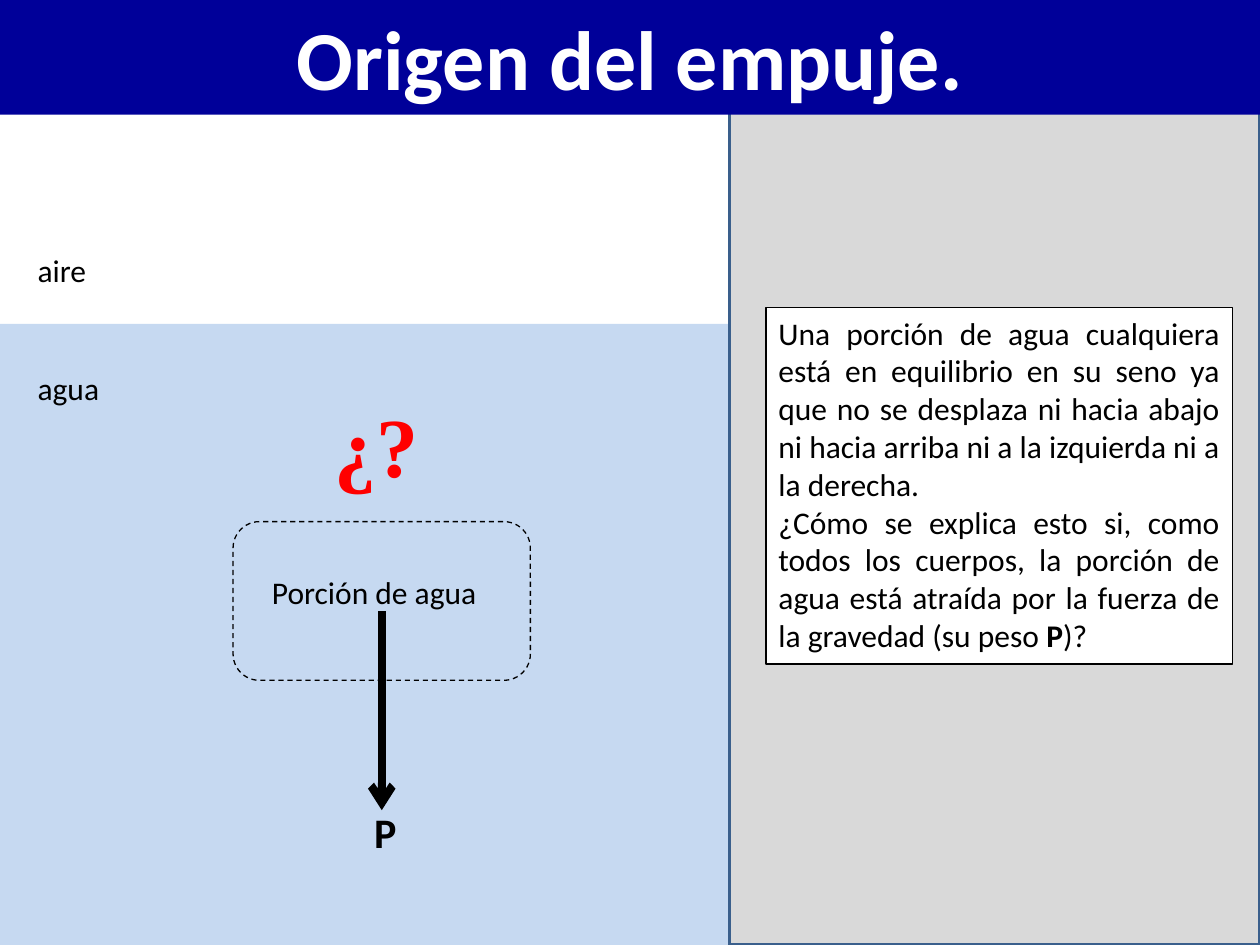
from typing import NamedTuple, Optional

from lxml.etree import SubElement
from pptx import Presentation
from pptx.dml.color import RGBColor
from pptx.enum.dml import MSO_LINE
from pptx.enum.shapes import MSO_CONNECTOR, MSO_SHAPE
from pptx.enum.text import MSO_ANCHOR, MSO_AUTO_SIZE, PP_ALIGN
from pptx.oxml.ns import qn
from pptx.util import Inches, Pt


class Box(NamedTuple):
    left: float
    top: float
    width: float
    height: float


class Panel(NamedTuple):
    box: Box
    fill: Optional[str] = None
    line: Optional[str] = None
    weight: float = 0.75
    kind: MSO_SHAPE = MSO_SHAPE.RECTANGLE
    dash: Optional[MSO_LINE] = None


class Label(NamedTuple):
    text: str
    box: Box
    size: int = 18
    bold: bool = False
    color: str = "000000"
    font: str = "Calibri"


WATER = Panel(Box(0, 2.57, 5.79, 4.93), "C6D9F1")
SIDE = Panel(Box(5.79, 0, 4.21, 7.5), "D9D9D9", "3A5F8C", 2)
PORTION = Panel(Box(1.85, 4.14, 2.36, 1.26), line="000000",
                kind=MSO_SHAPE.ROUNDED_RECTANGLE, dash=MSO_LINE.DASH)
NOTE = Panel(Box(6.08, 2.44, 3.7, 2.83), "FFFFFF", "000000")

LABELS = [
    Label("agua", Box(0.2, 2.88, 0.71, 0.4)),
    Label("aire", Box(0.2, 1.94, 0.71, 0.4)),
    Label("Porción de agua", Box(2.06, 4.5, 2.05, 0.4)),
    Label("P", Box(2.87, 6.35, 0.79, 0.51), 24, True),
    Label("¿?", Box(2.56, 3.07, 1.03, 0.91), 48, True, "FF0000",
          "Times New Roman"),
]

NOTE_TEXT = [
    [("Una porción de agua cualquiera está en equilibrio en su seno ya que "
      "no se desplaza ni hacia abajo ni hacia arriba ni a la izquierda ni a "
      "la derecha.", False)],
    [("¿Cómo se explica esto si, como todos los cuerpos, la porción de agua "
      "está atraída por la fuerza de la gravedad (su peso ", False),
     ("P", True), (")?", False)],
]


def rgb(code: str) -> RGBColor:
    return RGBColor.from_string(code)


def place(box: Box) -> list:
    return [Inches(side) for side in box]


def style(run, size: int, bold: bool, color: str, font: str) -> None:
    run.font.size = Pt(size)
    run.font.bold = bold
    run.font.name = font
    run.font.color.rgb = rgb(color)


def draw_panel(shapes, panel: Panel):
    shape = shapes.add_shape(panel.kind, *place(panel.box))
    shape.shadow.inherit = False
    if panel.fill:
        shape.fill.solid()
        shape.fill.fore_color.rgb = rgb(panel.fill)
    else:
        shape.fill.background()
    if panel.line:
        shape.line.color.rgb = rgb(panel.line)
        shape.line.width = Pt(panel.weight)
        if panel.dash:
            shape.line.dash_style = panel.dash
    else:
        shape.line.fill.background()
    return shape


def draw_label(shapes, label: Label) -> None:
    frame = shapes.add_textbox(*place(label.box)).text_frame
    frame.word_wrap = True
    frame.text = label.text
    style(frame.paragraphs[0].runs[0], label.size, label.bold, label.color,
          label.font)


def draw_note(shapes) -> None:
    frame = draw_panel(shapes, NOTE).text_frame
    frame.word_wrap = True
    frame.vertical_anchor = MSO_ANCHOR.TOP
    for i, parts in enumerate(NOTE_TEXT):
        para = frame.add_paragraph() if i else frame.paragraphs[0]
        para.alignment = PP_ALIGN.JUSTIFY
        for text, bold in parts:
            run = para.add_run()
            run.text = text
            style(run, 18, bold, "000000", "Calibri")


def draw_arrow(shapes, x: float, top: float, end: float) -> None:
    arrow = shapes.add_connector(MSO_CONNECTOR.STRAIGHT, Inches(x),
                                 Inches(top), Inches(x), Inches(end))
    arrow.line.color.rgb = rgb("000000")
    arrow.line.width = Pt(4.5)
    SubElement(arrow.line._get_or_add_ln(), qn("a:tailEnd"), type="arrow")
    SubElement(arrow._element.spPr, qn("a:effectLst"))


def draw_title(shapes) -> None:
    title = shapes.title
    title.left, title.top, title.width, title.height = place(
        Box(0, 0, 10, 0.91))
    title.fill.solid()
    title.fill.fore_color.rgb = rgb("000099")
    frame = title.text_frame
    frame.text = "Origen del empuje."
    frame.auto_size = MSO_AUTO_SIZE.NONE
    frame.vertical_anchor = MSO_ANCHOR.MIDDLE
    para = frame.paragraphs[0]
    para.alignment = PP_ALIGN.CENTER
    style(para.runs[0], 48, True, "FFFFFF", "Calibri")
    # Bring the title bar in front of the side panel
    shapes._spTree.append(title._element)


def main() -> None:
    deck = Presentation()
    deck.slide_width, deck.slide_height = Inches(10), Inches(7.5)
    shapes = deck.slides.add_slide(deck.slide_layouts[5]).shapes

    # Water, side panel and portion of water
    for panel in (WATER, SIDE, PORTION):
        draw_panel(shapes, panel)

    # Explanation, weight arrow and labels
    draw_note(shapes)
    draw_arrow(shapes, 3.03, 4.85, 6.43)
    for label in LABELS:
        draw_label(shapes, label)

    draw_title(shapes)
    deck.save("out.pptx")


if __name__ == "__main__":
    main()
